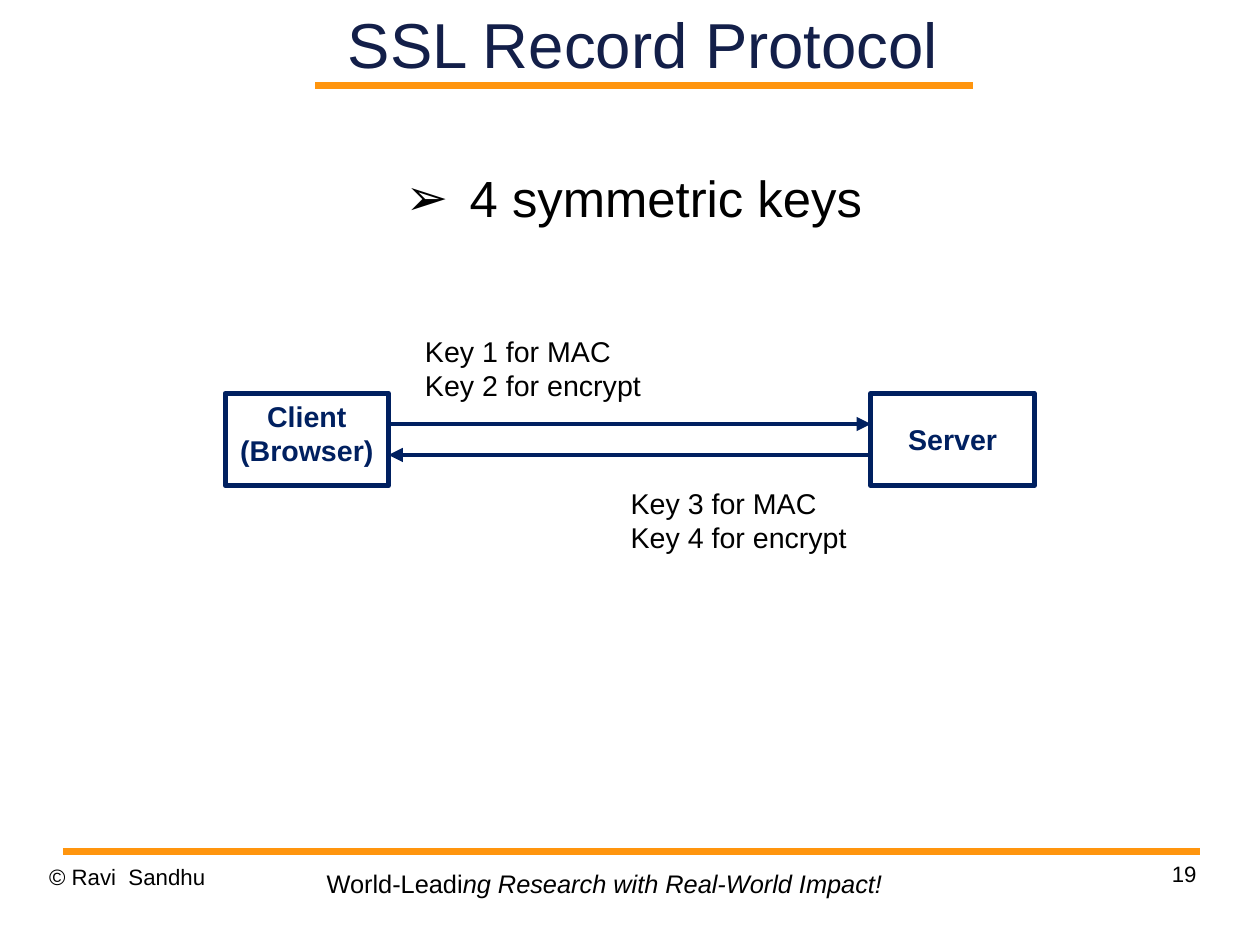
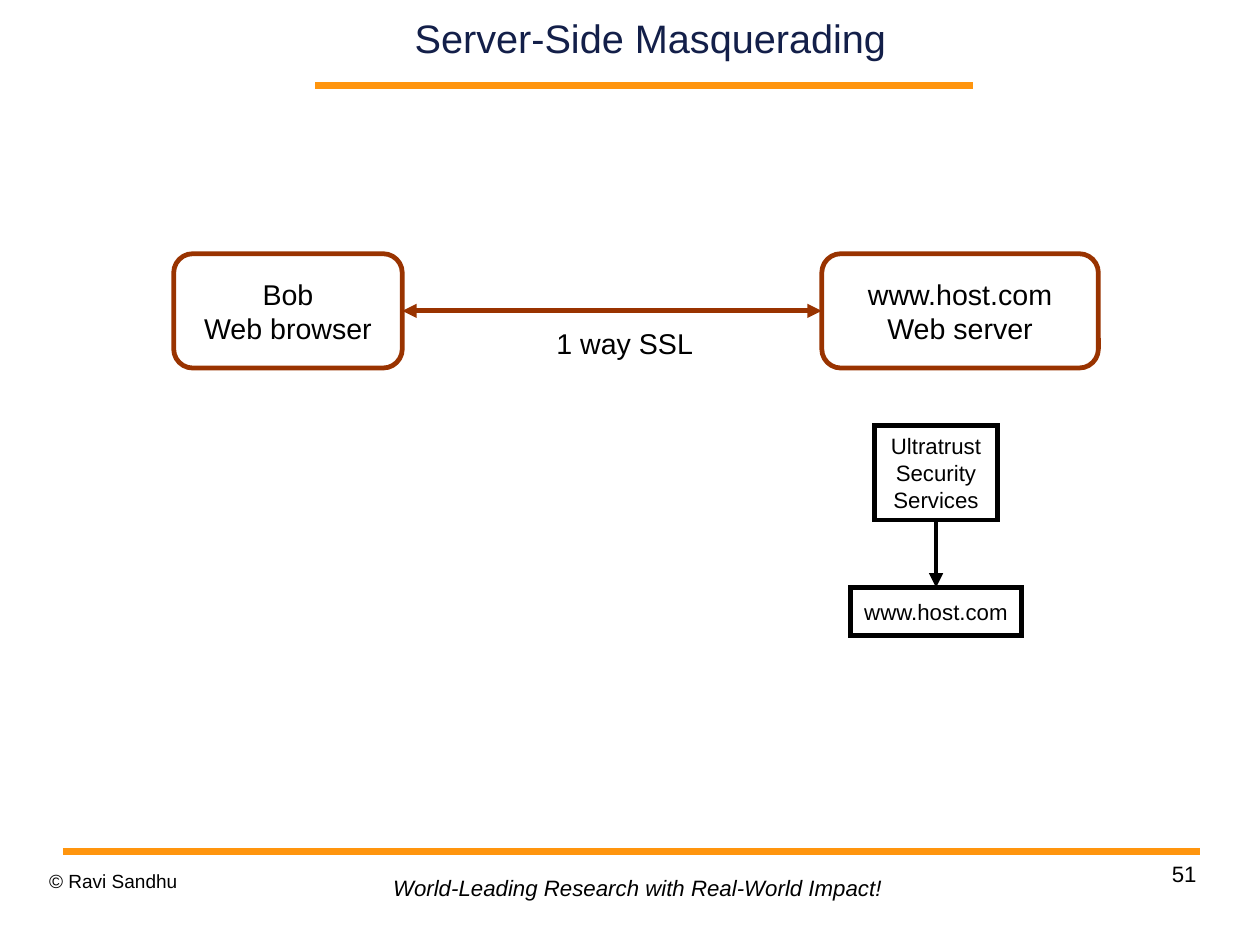
from collections import namedtuple

from lxml import etree
from pptx import Presentation
from pptx.dml.color import RGBColor
from pptx.enum.shapes import MSO_CONNECTOR, MSO_SHAPE
from pptx.enum.text import MSO_ANCHOR, MSO_AUTO_SIZE, PP_ALIGN
from pptx.oxml.ns import qn
from pptx.util import Emu, Inches, Pt

STRAIGHT = MSO_CONNECTOR.STRAIGHT
RECTANGLE, ROUNDED = MSO_SHAPE.RECTANGLE, MSO_SHAPE.ROUNDED_RECTANGLE
TOP, MIDDLE = MSO_ANCHOR.TOP, MSO_ANCHOR.MIDDLE
LEFT, CENTER, RIGHT = PP_ALIGN.LEFT, PP_ALIGN.CENTER, PP_ALIGN.RIGHT
NO_AUTO_SIZE = MSO_AUTO_SIZE.NONE
SIDE_TOP, SIDE_LEFT, SIDE_BOTTOM, SIDE_RIGHT = range(4)
TITLE_AND_BODY, TITLE_ONLY = 1, 5

SLIDE_WIDTH, SLIDE_HEIGHT = Emu(10080625), Emu(7559675)
FONT = "Arial"
BLACK, TITLE_NAVY, NAVY = "000000", "131F49", "002060"
ORANGE, BROWN = "FF950E", "993300"
RULE_WEIGHT, LINE_WEIGHT = 4.31, 3
NO_MARGINS, TEXT_MARGINS = (0, 0), (0.1, 0.05)

Box = namedtuple("Box", "left top width height")


def color(hex_string):
    return RGBColor.from_string(hex_string)


def place(shape, box):
    shape.left, shape.top, shape.width, shape.height = map(Inches, box)


def style_paragraph(paragraph, size, hex_string=BLACK, align=LEFT, bold=False, italic=False):
    paragraph.alignment = align
    paragraph.space_before = Pt(0)
    font = paragraph.font
    font.name, font.size, font.bold, font.italic = FONT, Pt(size), bold, italic
    font.color.rgb = color(hex_string)


def set_frame(shape, margins=TEXT_MARGINS, anchor=TOP, wrap=False):
    frame = shape.text_frame
    frame.auto_size, frame.word_wrap, frame.vertical_anchor = NO_AUTO_SIZE, wrap, anchor
    frame.margin_left = frame.margin_right = Inches(margins[0])
    frame.margin_top = frame.margin_bottom = Inches(margins[1])
    return frame


def write(shape, text, size, margins=TEXT_MARGINS, anchor=TOP, wrap=False, **style):
    """Fill a shape with one paragraph for each line of text."""
    frame = set_frame(shape, margins, anchor, wrap)
    frame.text = text
    for paragraph in frame.paragraphs:
        style_paragraph(paragraph, size, **style)


def add_label(slide, box, text, size, **options):
    write(slide.shapes.add_textbox(*map(Inches, box)), text, size, **options)


def add_node(slide, box, text, size, line_color, kind=RECTANGLE, sharp=False, **options):
    """Draw an outlined box with centred text; sharp gives it pointed corners."""
    node = slide.shapes.add_shape(kind, *map(Inches, box))
    node.shadow.inherit = False
    node.fill.background()
    node.line.color.rgb = color(line_color)
    node.line.width = Pt(LINE_WEIGHT)
    if sharp:
        etree.SubElement(node.line._get_or_add_ln(), qn("a:miter"), lim="800000")
    write(node, text, size, align=CENTER, **options)
    return node


def add_line(slide, start, end, hex_string, weight=LINE_WEIGHT, ends=()):
    """Draw a line; ends names headEnd, tailEnd or both, in that order."""
    line = slide.shapes.add_connector(STRAIGHT, *map(Inches, (*start, *end)))
    line.line.color.rgb = color(hex_string)
    line.line.width = Pt(weight)
    outline = line.line._get_or_add_ln()
    for end_name in ends:
        etree.SubElement(outline, qn("a:" + end_name), type="triangle")
    etree.SubElement(line._element.spPr, qn("a:effectLst"))
    return line


def join(slide, first, first_side, second, second_side, hex_string, ends):
    line = add_line(slide, (0, 0), (1, 1), hex_string, ends=ends)
    line.begin_connect(first, first_side)
    line.end_connect(second, second_side)


def add_frame(presentation, layout, title, title_box, title_size):
    """Start a slide with the title and the two orange rules."""
    slide = presentation.slides.add_slide(presentation.slide_layouts[layout])
    for left, right, height in ((2.76, 8.51, 0.75), (0.55, 10.5, 7.45)):
        add_line(slide, (left, height), (right, height), ORANGE, RULE_WEIGHT)
    place(slide.shapes.title, title_box)
    write(slide.shapes.title, title, title_size, margins=NO_MARGINS, anchor=MIDDLE,
          wrap=True, hex_string=TITLE_NAVY, align=CENTER)
    return slide


def add_footer(slide, top, owner, owner_size, number, motto_box, motto_size, upright=""):
    """Write owner, page number and motto; upright is the motto's part not in italics."""
    add_label(slide, Box(0.43, top, 2.57, 0.5), owner, owner_size, margins=NO_MARGINS, wrap=True)
    add_label(slide, Box(7.9, 7.53, 2.57, 0.57), number, 14,
              margins=NO_MARGINS, wrap=True, align=RIGHT)
    motto = "World-Leading Research with Real-World Impact!"
    frame = set_frame(slide.shapes.add_textbox(*map(Inches, motto_box)))
    paragraph = frame.paragraphs[0]
    if upright:
        paragraph.add_run().text = upright
    slanted = paragraph.add_run()
    slanted.text = motto.removeprefix(upright)
    style_paragraph(paragraph, motto_size, italic=not upright)
    if upright:
        slanted.font.italic = True


def add_bullet(body, box, text, size):
    place(body, box)
    frame = set_frame(body, NO_MARGINS, wrap=True)
    frame.text = text
    paragraph = frame.paragraphs[0]
    properties = paragraph._p.get_or_add_pPr()
    properties.set("marL", str(Inches(0.68)))
    properties.set("indent", str(Inches(-0.56)))
    bullet_color = etree.SubElement(properties, qn("a:buClr"))
    etree.SubElement(bullet_color, qn("a:srgbClr"), val=BLACK)
    etree.SubElement(properties, qn("a:buFont"), typeface=FONT)
    etree.SubElement(properties, qn("a:buChar"), char="➢")
    style_paragraph(paragraph, size)


def draw_key_exchange(slide, box):
    """Client and server at the sides, one arrow for each direction between them."""
    node_width, node_height = 1.43, 0.81
    label_width, label_height = 2.11, 0.71
    node_top = box.top + 0.57
    client_right = box.left + node_width
    server_left = box.left + box.width - node_width
    client = Box(box.left, node_top, node_width, node_height)
    server = client._replace(left=server_left)
    add_node(slide, client, "Client\n(Browser)", 18, NAVY,
             wrap=True, hex_string=NAVY, bold=True)
    add_node(slide, server, "Server", 18, NAVY,
             anchor=MIDDLE, wrap=True, hex_string=NAVY, bold=True)
    for third, end_name in ((1, "tailEnd"), (2, "headEnd")):
        height = node_top + third * node_height / 3
        add_line(slide, (client_right, height), (server_left, height), NAVY, ends=(end_name,))
    label_places = (
        (client_right + 0.22, box.top),
        (server_left - 0.09 - label_width, box.top + box.height - label_height),
    )
    for index, (left, top) in enumerate(label_places):
        first_key = 2 * index + 1
        add_label(slide, Box(left, top, label_width, label_height),
                  f"Key {first_key} for MAC\nKey {first_key + 1} for encrypt", 18)


def draw_connection(slide, box):
    """Browser and server at the ends of the box, joined by a two-way arrow."""
    browser_width, server_width = 2, 2.42
    browser = add_node(slide, box._replace(width=browser_width), "Bob\nWeb browser", 18,
                       BROWN, ROUNDED, anchor=MIDDLE)
    server_left = box.left + box.width - server_width
    server = add_node(slide, box._replace(left=server_left, width=server_width),
                      "www.host.com\nWeb server", 18, BROWN, ROUNDED, anchor=MIDDLE)
    join(slide, browser, SIDE_RIGHT, server, SIDE_LEFT, BROWN, ("headEnd", "tailEnd"))
    add_label(slide, Box(box.left + 3.25, box.top + 0.58, 1.41, 0.4), "1 way SSL", 18)


def draw_certificate_chain(slide, box):
    """Issuer at the top of the box, certified host at the bottom."""
    issuer_width, issuer_height, host_height = 1.08, 0.83, 0.42
    issuer_box = Box(box.left + (box.width - issuer_width) / 2, box.top,
                     issuer_width, issuer_height)
    issuer = add_node(slide, issuer_box, "Ultratrust\nSecurity\nServices", 14, BLACK,
                      sharp=True, anchor=MIDDLE)
    host_box = box._replace(top=box.top + box.height - host_height, height=host_height)
    host = add_node(slide, host_box, "www.host.com", 14, BLACK, sharp=True, anchor=MIDDLE)
    join(slide, issuer, SIDE_BOTTOM, host, SIDE_TOP, BLACK, ("tailEnd",))


def build_record_protocol(presentation):
    slide = add_frame(presentation, TITLE_AND_BODY, "SSL Record Protocol",
                      Box(2.41, 0, 6.43, 0.75), 40)
    add_bullet(slide.placeholders[1], Box(3.43, 1.46, 4.15, 4.49), "4 symmetric keys", 32)
    add_footer(slide, 7.55, "© Ravi  Sandhu", 14, "19",
               Box(2.76, 7.55, 5.08, 0.37), 16, upright="World-Leadi")
    draw_key_exchange(slide, Box(1.97, 2.87, 7.08, 2.04))


def build_masquerading(presentation):
    slide = add_frame(presentation, TITLE_ONLY, "Server-Side Masquerading",
                      Box(2.85, 0.05, 5.68, 0.56), 25)
    add_footer(slide, 7.61, "© Ravi Sandhu", 12, "51", Box(3.34, 7.6, 4.48, 0.33), 14)
    draw_connection(slide, Box(1.52, 2.22, 8.09, 1))
    draw_certificate_chain(slide, Box(7.44, 3.72, 1.5, 1.84))


def main():
    presentation = Presentation()
    presentation.slide_width = SLIDE_WIDTH
    presentation.slide_height = SLIDE_HEIGHT
    build_record_protocol(presentation)
    build_masquerading(presentation)
    presentation.save("out.pptx")


if __name__ == "__main__":
    main()
